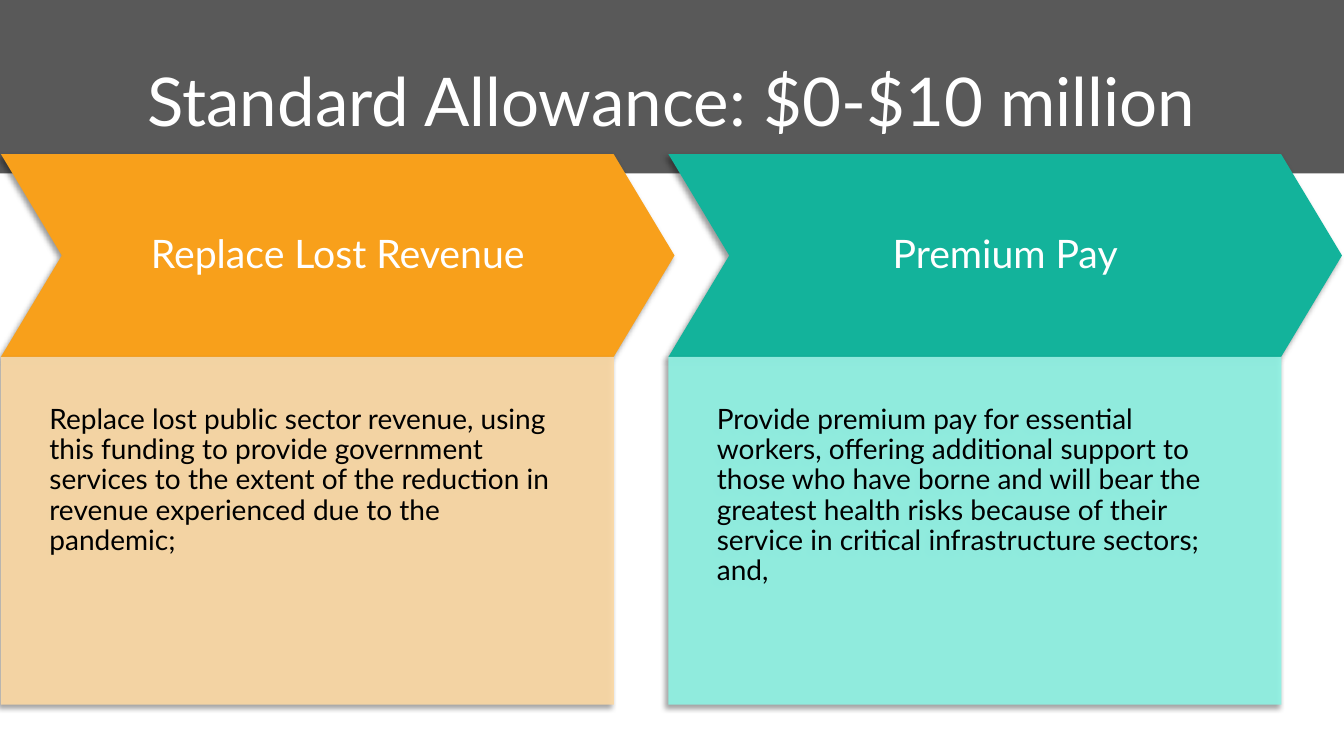
from dataclasses import dataclass

from lxml.etree import SubElement
from pptx import Presentation
from pptx.dml.color import RGBColor
from pptx.enum.shapes import MSO_SHAPE as Preset
from pptx.enum.text import MSO_ANCHOR as Anchor, MSO_AUTO_SIZE as AutoSize, PP_ALIGN as Align
from pptx.oxml.ns import qn
from pptx.util import Emu, Pt

EMU_PER_PX = 9144
FONT = "Lato"
COLORS = {
    "banner": "595959",
    "white": "FFFFFF",
    "black": "000000",
    "orange": "F8A01B",
    "orange_tint": "FCD9A4",
    "teal": "13B39B",
    "teal_tint": "8EF3E4",
}


@dataclass(frozen=True)
class Box:
    left: int
    top: int
    width: int
    height: int


@dataclass(frozen=True)
class Allowance:
    heading: str
    detail: str
    color: str
    tint: str


ALLOWANCES = [
    Allowance(
        "Replace Lost Revenue",
        "Replace lost public sector revenue, using this funding to provide government "
        "services to the extent of the reduction in revenue experienced due to the pandemic;",
        "orange", "orange_tint",
    ),
    Allowance(
        "Premium Pay",
        "Provide premium pay for essential workers, offering additional support to those "
        "who have borne and will bear the greatest health risks because of their service "
        "in critical infrastructure sectors; and,",
        "teal", "teal_tint",
    ),
]
FIRST_LEFT, COLUMN_STEP = 1, 662
CHEVRON_TOP, CHEVRON_WIDTH, CHEVRON_HEIGHT = 153, 668, 201
PANEL_WIDTH, PANEL_HEIGHT = 608, 345
CHEVRON_POINT = 0.3


def px(length: int) -> Emu:
    return Emu(length * EMU_PER_PX)


def rgb(name: str) -> RGBColor:
    return RGBColor.from_string(COLORS[name])


def place(shape, box: Box) -> None:
    shape.left, shape.top = px(box.left), px(box.top)
    shape.width, shape.height = px(box.width), px(box.height)


def write_text(shape, text: str, *, size: int, color: str, align=Align.LEFT,
               anchor=Anchor.TOP, insets=(0, 0, 0, 0), line_spacing: float = 1.0) -> None:
    frame = shape.text_frame
    frame.word_wrap = True
    frame.auto_size = AutoSize.NONE
    frame.vertical_anchor = anchor
    frame.margin_left, frame.margin_top, frame.margin_right, frame.margin_bottom = map(px, insets)
    paragraph = frame.paragraphs[0]
    paragraph.alignment = align
    paragraph.line_spacing = line_spacing
    run = paragraph.add_run()
    run.text = text
    run.font.name = FONT
    run.font.size = Pt(size)
    run.font.color.rgb = rgb(color)


def add_shape(slide, preset: Preset, box: Box, color: str):
    shape = slide.shapes.add_shape(preset, 0, 0, 0, 0)
    place(shape, box)
    shape.shadow.inherit = False
    shape.fill.solid()
    shape.fill.fore_color.rgb = rgb(color)
    shape.line.fill.background()
    return shape


def add_alpha(color_element, percent: int) -> None:
    SubElement(color_element, qn("a:alpha"), val=str(percent * 1000))


def add_shadow(shape) -> None:
    effects = shape.element.spPr.find(qn("a:effectLst"))
    shadow = SubElement(effects, qn("a:outerShdw"), blurRad=str(Pt(4)), dist=str(Pt(3)),
                        dir=str(135 * 60000), rotWithShape="0")
    add_alpha(SubElement(shadow, qn("a:srgbClr"), val=COLORS["black"]), 40)


def add_title(slide, text: str) -> None:
    title = slide.shapes.title
    banner = add_shape(slide, Preset.RECTANGLE, Box(0, 0, 1333, 172), "banner")
    title.element.addprevious(banner.element)
    place(title, Box(70, 37, 1192, 124))
    write_text(title, text, size=48, color="white", align=Align.CENTER,
               anchor=Anchor.MIDDLE, insets=(0, 7, 0, 7))


def add_allowance(slide, allowance: Allowance, left: int) -> None:
    chevron = add_shape(slide, Preset.CHEVRON,
                        Box(left, CHEVRON_TOP, CHEVRON_WIDTH, CHEVRON_HEIGHT), allowance.color)
    chevron.adjustments[0] = CHEVRON_POINT
    add_shadow(chevron)
    write_text(chevron, allowance.heading, size=28, color="white", align=Align.CENTER,
               anchor=Anchor.MIDDLE, insets=(25, 25, 25, 25), line_spacing=0.9)

    panel = add_shape(slide, Preset.RECTANGLE,
                      Box(left, CHEVRON_TOP + CHEVRON_HEIGHT, PANEL_WIDTH, PANEL_HEIGHT),
                      allowance.tint)
    add_alpha(panel.element.spPr.find(qn("a:solidFill")).find(qn("a:srgbClr")), 90)
    add_shadow(panel)
    write_text(panel, allowance.detail, size=20, color="black",
               insets=(48, 48, 48, 96), line_spacing=0.9)


def main() -> None:
    presentation = Presentation()
    presentation.slide_width, presentation.slide_height = px(1333), px(750)
    slide = presentation.slides.add_slide(presentation.slide_layouts[5])
    add_title(slide, "Standard Allowance: $0-$10 million")
    for index, allowance in enumerate(ALLOWANCES):
        add_allowance(slide, allowance, FIRST_LEFT + index * COLUMN_STEP)
    presentation.save("out.pptx")


if __name__ == "__main__":
    main()
